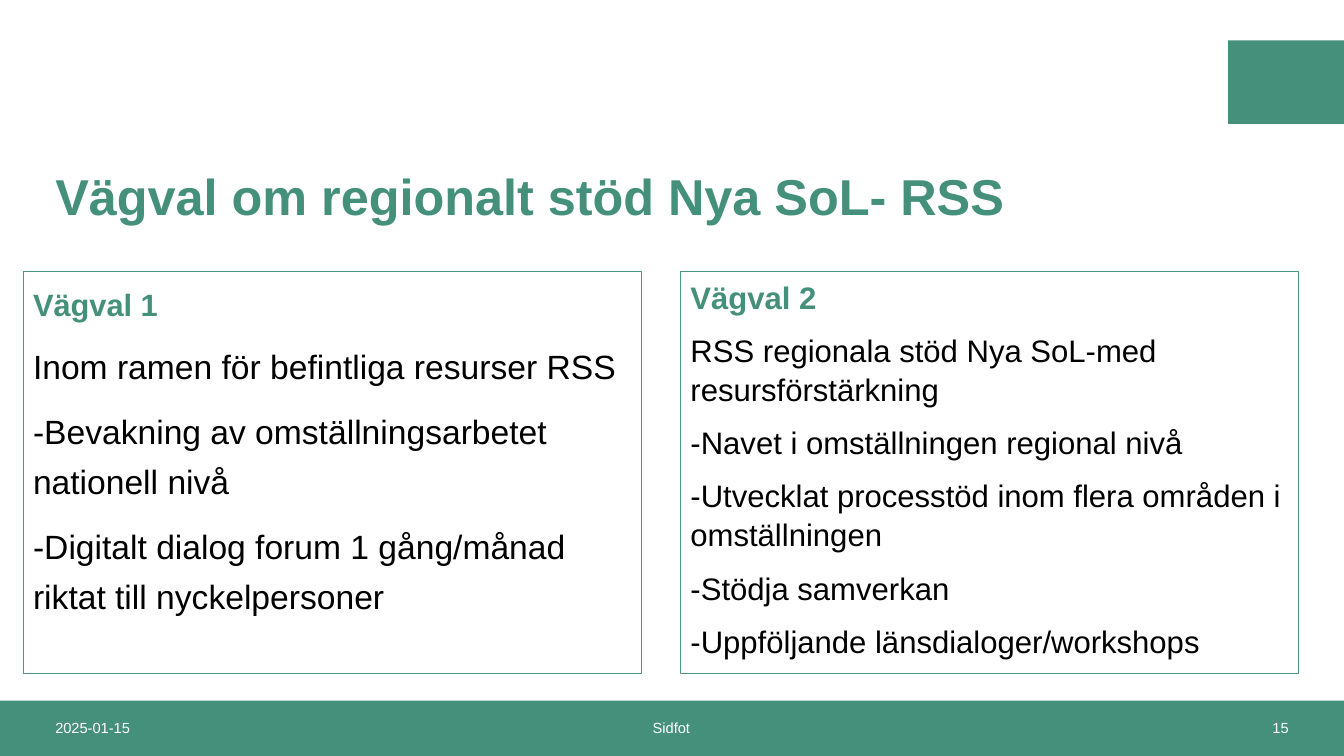
from pptx import Presentation
from pptx.dml.color import RGBColor
from pptx.enum.shapes import MSO_SHAPE
from pptx.enum.text import MSO_ANCHOR, PP_ALIGN
from pptx.util import Inches, Pt

GREEN, FRAME, BLACK, WHITE = "45907A", "4B9587", "000000", "FFFFFF"


def rgb(value):
    return RGBColor.from_string(value)


def add_bar(s, x, y, w, h):
    sp = s.shapes.add_shape(MSO_SHAPE.RECTANGLE, Inches(x), Inches(y), Inches(w), Inches(h))
    sp.shadow.inherit = False
    sp.fill.solid()
    sp.fill.fore_color.rgb = rgb(GREEN)
    sp.line.fill.background()


def add_box(s, x, y, w, h, anchor=MSO_ANCHOR.MIDDLE):
    sp = s.shapes.add_textbox(Inches(x), Inches(y), Inches(w), Inches(h))
    sp.text_frame.word_wrap = True
    sp.text_frame.vertical_anchor = anchor
    return sp


def write(p, text, size=10.5, color=WHITE, bold=False, align=PP_ALIGN.LEFT, spacing=1.0, before=0):
    p.alignment = align
    p.line_spacing = spacing
    p.space_before = Pt(before)
    r = p.add_run()
    r.text = text
    r.font.name = "Arial"
    r.font.size = Pt(size)
    r.font.bold = bold
    r.font.color.rgb = rgb(color)


def add_title(s, x, y, w, h, text):
    tf = add_box(s, x, y, w, h).text_frame
    write(tf.paragraphs[0], text, size=36, color=GREEN, bold=True, spacing=0.9)


def add_option(s, x, y, w, h, heading, lines, heading_size, size, spacing):
    sp = add_box(s, x, y, w, h, MSO_ANCHOR.TOP)
    sp.line.color.rgb = rgb(FRAME)
    sp.line.width = Pt(0.75)
    tf = sp.text_frame
    write(tf.paragraphs[0], heading, size=heading_size, color=GREEN, bold=True, spacing=spacing)
    for line in lines:
        write(tf.add_paragraph(), line, size=size, color=BLACK, spacing=spacing, before=10)


def add_footer(s, x, y, w, h):
    add_bar(s, x, y, w, h)
    fields = [
        (0.45, 3, "2025-01-15", PP_ALIGN.LEFT),
        (3.91, 5.5, "Sidfot", PP_ALIGN.CENTER),
        (9.88, 3, "15", PP_ALIGN.RIGHT),
    ]
    for left, width, text, align in fields:
        tf = add_box(s, x + left, y, width, h - 0.01).text_frame
        write(tf.paragraphs[0], text, align=align)


def main():
    prs = Presentation()
    prs.slide_width, prs.slide_height = Inches(13.33), Inches(7.5)
    s = prs.slides.add_slide(prs.slide_layouts[6])

    # Corner block and title
    add_bar(s, 12.18, 0.4, 1.15, 0.83)
    add_title(s, 0.45, 1.32, 11.39, 1.32, "Vägval om regionalt stöd Nya SoL- RSS")

    # The two options side by side
    add_option(s, 0.23, 2.69, 6.13, 3.99, "Vägval 1", [
        "Inom ramen för befintliga resurser RSS",
        "-Bevakning av omställningsarbetet nationell nivå",
        "-Digitalt dialog forum 1 gång/månad riktat till nyckelpersoner",
    ], heading_size=22, size=24, spacing=1.25)
    add_option(s, 6.75, 2.69, 6.13, 3.99, "Vägval 2", [
        "RSS regionala stöd Nya SoL-med resursförstärkning",
        "-Navet i omställningen regional nivå",
        "-Utvecklat processtöd inom flera områden i omställningen",
        "-Stödja samverkan",
        "-Uppföljande länsdialoger/workshops",
    ], heading_size=22.2, size=22.2, spacing=1.05)

    # Footer band
    add_footer(s, 0, 6.95, 13.33, 0.55)

    prs.save("out.pptx")


if __name__ == "__main__":
    main()
